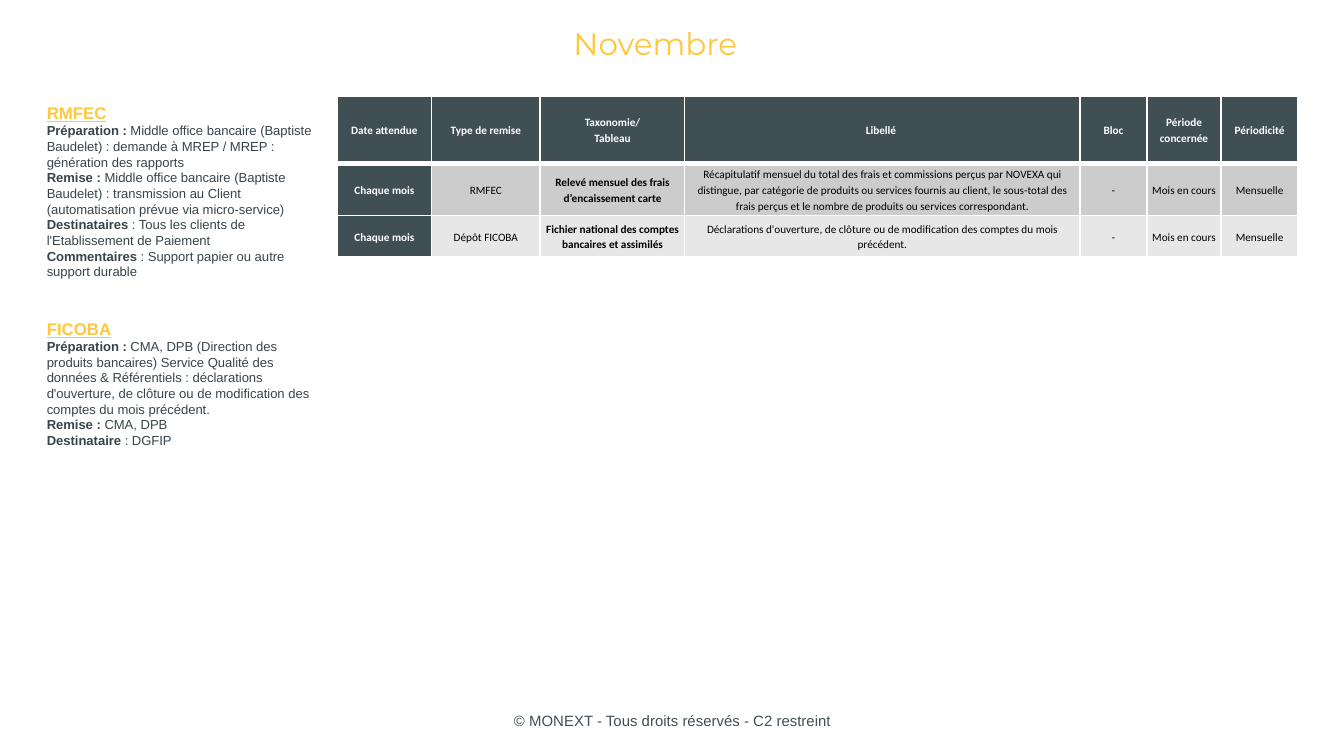
from lxml.etree import SubElement
from pptx import Presentation
from pptx.dml.color import RGBColor
from pptx.enum.text import MSO_ANCHOR, PP_ALIGN
from pptx.oxml.ns import qn
from pptx.util import Inches, Pt

GOLD = RGBColor(0xFF, 0xC8, 0x3A)
SLATE = RGBColor(0x40, 0x4F, 0x54)
INK = RGBColor(0x38, 0x44, 0x4B)
WHITE = RGBColor(0xFF, 0xFF, 0xFF)
BLACK = RGBColor(0, 0, 0)
GREY = RGBColor(0xCC, 0xCC, 0xCC)
PALE = RGBColor(0xE7, 0xE7, 0xE7)

WIDE, HIGH = 100, 56.25
UNIT = Inches(10) / WIDE
COLS = [7, 8.1, 10.75, 29.4, 5, 5.5, 5.75]
ROWS = [5, 3.9, 3.05]
FILLS = [SLATE, GREY, PALE]

GRID = [
    ["Date attendue", "Type de remise", "Taxonomie/\nTableau", "Libellé ", "Bloc",
     "Période concernée", "Périodicité"],
    ["Chaque mois", "RMFEC", "Relevé mensuel des frais d’encaissement carte",
     "Récapitulatif mensuel du total des frais et commissions perçus par NOVEXA qui "
     "distingue, par catégorie de produits ou services fournis au client, le sous-total des "
     "frais perçus et le nombre de produits ou services correspondant.",
     "-", "Mois en cours", "Mensuelle"],
    ["Chaque mois", "Dépôt FICOBA", "Fichier national des comptes bancaires et assimilés",
     "Déclarations d'ouverture, de clôture ou de modification des comptes du mois précédent.",
     "-", "Mois en cours", "Mensuelle"],
]

RMFEC = [
    ("Préparation :", " Middle office bancaire (Baptiste Baudelet) : demande à MREP / MREP : "
     "génération des rapports"),
    ("Remise : ", "Middle office bancaire (Baptiste Baudelet) : transmission au Client "
     "(automatisation prévue via micro-service)"),
    ("Destinataires", " : Tous les clients de l'Etablissement de Paiement"),
    ("Commentaires", " : Support papier ou autre support durable"),
]

FICOBA = [
    ("Préparation :", " CMA, DPB (Direction des produits bancaires) Service Qualité des "
     "données & Référentiels : déclarations d'ouverture, de clôture ou de modification des "
     "comptes du mois précédent."),
    ("Remise : ", "CMA, DPB"),
    ("Destinataire", " : DGFIP"),
]


def scale(*spans):
    """Turn grid units into slide lengths."""
    return [round(span * UNIT) for span in spans]


def write(par, text, size=7, face="Arial", tint=INK, bold=False, line=False):
    """Add one styled run to a paragraph."""
    run = par.add_run()
    run.text = text
    font = run.font
    font.size, font.name, font.bold, font.underline = Pt(size), face, bold, line
    font.color.rgb = tint


def frame(slide, box):
    """Add a wrapping text box and return its text frame."""
    text = slide.shapes.add_textbox(*scale(*box)).text_frame
    text.word_wrap = True
    return text


def banner(slide, box, text, **style):
    """Place one centred line of text in a box."""
    area = frame(slide, box)
    area.vertical_anchor = MSO_ANCHOR.MIDDLE
    par = area.paragraphs[0]
    par.alignment = PP_ALIGN.CENTER
    write(par, text, **style)


def notice(slide, box, head, items):
    """Place a headed list of labelled details in a box."""
    area = frame(slide, box)
    write(area.paragraphs[0], head, size=9, tint=GOLD, bold=True, line=True)
    for label, detail in items:
        par = area.add_paragraph()
        write(par, label, bold=True)
        write(par, detail)


def edge(cell, side, width):
    """Draw a white border on one side of a cell."""
    props = cell._tc.get_or_add_tcPr()
    line = SubElement(props, qn("a:ln" + side), w=str(Pt(width)))
    fill = SubElement(line, qn("a:solidFill"))
    SubElement(fill, qn("a:srgbClr"), val=str(WHITE))


def fill_cell(cell, text, row, col):
    """Format a cell by its place in the table."""
    dark = row == 0 or col == 0
    for side in "LRTB":
        edge(cell, side, 3 if (row, side) in ((0, "B"), (1, "T")) else 1)
    cell.fill.solid()
    cell.fill.fore_color.rgb = SLATE if dark else FILLS[row]
    cell.vertical_anchor = MSO_ANCHOR.MIDDLE
    cell.margin_left = cell.margin_right = Inches(0.03)
    cell.margin_top = cell.margin_bottom = Inches(0.02)
    area = cell.text_frame
    for step, part in enumerate(text.split("\n")):
        par = area.add_paragraph() if step else area.paragraphs[0]
        par.alignment, par.line_spacing = PP_ALIGN.CENTER, 1.15
        write(par, part, size=6, face="Calibri", tint=WHITE if dark else BLACK,
              bold=dark or col == 2)


def chart_grid(slide, box):
    """Place the table of monthly filings in a box."""
    table = slide.shapes.add_table(len(ROWS), len(COLS), *scale(*box)).table
    for col, width in zip(table.columns, scale(*COLS)):
        col.width = width
    for row, height in zip(table.rows, scale(*ROWS)):
        row.height = height
    for row, texts in enumerate(GRID):
        for col, text in enumerate(texts):
            fill_cell(table.cell(row, col), text, row, col)


def main():
    """Build and save the slide."""
    deck = Presentation()
    deck.slide_width, deck.slide_height = scale(WIDE, HIGH)
    slide = deck.slides.add_slide(deck.slide_layouts[6])
    banner(slide, (34.2, 52.1, 31.7, 3), "© MONEXT - Tous droits réservés - C2 restreint",
           size=8, tint=SLATE)
    banner(slide, (21, 1.4, 55.5, 3.6), "Novembre", size=16.6, face="Montserrat", tint=GOLD)
    notice(slide, (2.5, 7.15, 22.6, 14.2), "RMFEC", RMFEC)
    notice(slide, (2.5, 23.2, 22.6, 10.7), "FICOBA", FICOBA)
    chart_grid(slide, (25.1, 7.15, sum(COLS), sum(ROWS)))
    deck.save("out.pptx")


if __name__ == "__main__":
    main()
